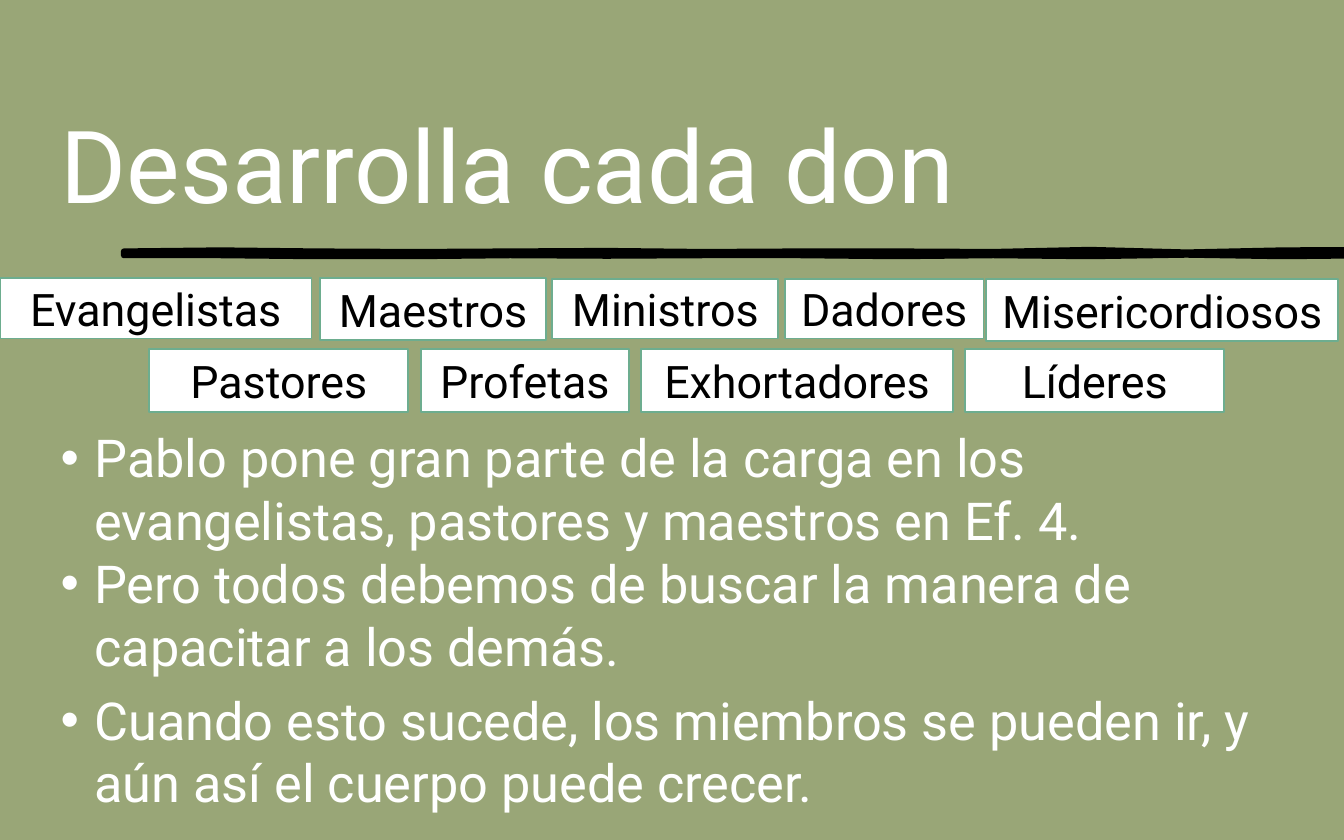
from dataclasses import dataclass

from lxml import etree
from pptx import Presentation
from pptx.dml.color import RGBColor
from pptx.enum.shapes import MSO_SHAPE
from pptx.enum.text import MSO_ANCHOR, MSO_AUTO_SIZE, PP_ALIGN
from pptx.oxml.ns import qn
from pptx.util import Cm, Pt

RECTANGLE = MSO_SHAPE.RECTANGLE
LEFT, CENTER = PP_ALIGN.LEFT, PP_ALIGN.CENTER
TOP, MIDDLE = MSO_ANCHOR.TOP, MSO_ANCHOR.MIDDLE
NO_AUTOFIT = MSO_AUTO_SIZE.NONE

FONT = "Roboto"
WHITE, BLACK, SAGE, GREEN = "FFFFFF", "000000", "99A677", "6DAD8F"


@dataclass
class Box:
    left: float
    top: float
    width: float
    height: float


@dataclass
class Gift:
    name: str
    box: Box


@dataclass
class Bullet:
    text: str
    space_before: float = 0


BULLETS = [
    Bullet("Pablo pone gran parte de la carga en los evangelistas, pastores y maestros en Ef. 4."),
    Bullet("Pero todos debemos de buscar la manera de capacitar a los demás."),
    Bullet("Cuando esto sucede, los miembros se pueden ir, y aún así el cuerpo puede crecer.", 6),
]
UPPER_GIFTS = [
    Gift("Evangelistas", Box(0, 5.26, 5.89, 1.14)),
    Gift("Maestros", Box(6.05, 5.26, 4.27, 1.17)),
    Gift("Ministros", Box(10.44, 5.28, 4.27, 1.12)),
    Gift("Dadores", Box(14.83, 5.28, 3.76, 1.12)),
    Gift("Misericordiosos", Box(18.64, 5.28, 6.65, 1.17)),
]
LOWER_WIDTHS = {"Pastores": 4.9, "Profetas": 3.94, "Exhortadores": 5.89, "Líderes": 4.9}
LOWER_LEFT, LOWER_TOP, LOWER_HEIGHT, LOWER_GAP = 2.82, 6.6, 1.19, 0.23

STROKE = Box(2.34, 4.75, 29.21, 0.08)
# Vertical wobble of the brush stroke at equal steps, in cm
TOP_WOBBLE = [0, -0.02, 0, 0.01, 0, -0.01, 0.01, 0, 0, 0.01, -0.03, 0.02, -0.02, -0.03, 0.02, -0.02, 0]
BOTTOM_WOBBLE = [0, 0, 0.02, 0.02, 0, 0.01, 0, 0, 0.02, 0, 0.02, -0.01, 0.02, 0, 0.03, 0.01, 0]


def color(hex_code: str) -> RGBColor:
    return RGBColor.from_string(hex_code)


def place(shape, box: Box) -> None:
    shape.left, shape.top = Cm(box.left), Cm(box.top)
    shape.width, shape.height = Cm(box.width), Cm(box.height)


def format_paragraph(paragraph, size: float, hex_code: str, alignment) -> None:
    paragraph.alignment = alignment
    paragraph.font.name = FONT
    paragraph.font.size = Pt(size)
    paragraph.font.color.rgb = color(hex_code)


def set_bullet(paragraph, indent: float) -> None:
    properties = paragraph._p.get_or_add_pPr()
    properties.set("marL", str(Cm(indent)))
    properties.set("indent", str(-Cm(indent)))
    etree.SubElement(properties, qn("a:buFont"), typeface="Arial")
    etree.SubElement(properties, qn("a:buChar"), char="•")


def fill_title(title, text: str) -> None:
    place(title, Box(0.89, 1.24, 29.21, 3.68))
    frame = title.text_frame
    frame.text = text
    frame.auto_size = NO_AUTOFIT
    frame.vertical_anchor = MIDDLE
    format_paragraph(frame.paragraphs[0], 54, WHITE, LEFT)


def fill_body(body, bullets: list[Bullet]) -> None:
    place(body, Box(0.89, 7.92, 23.95, 7.7))
    frame = body.text_frame
    frame.text = "\n".join(bullet.text for bullet in bullets)
    frame.auto_size = NO_AUTOFIT
    frame.vertical_anchor = TOP
    for paragraph, bullet in zip(frame.paragraphs, bullets):
        format_paragraph(paragraph, 28, WHITE, LEFT)
        paragraph.space_before = Pt(bullet.space_before)
        set_bullet(paragraph, 0.64)


def draw_brush_stroke(slide) -> None:
    step = STROKE.width / (len(TOP_WOBBLE) - 1)

    def edge(base: float, wobble: list[float]) -> list[tuple[int, int]]:
        return [(Cm(STROKE.left + index * step), Cm(base + offset))
                for index, offset in enumerate(wobble)]

    upper = edge(STROKE.top, TOP_WOBBLE)
    lower = edge(STROKE.top + STROKE.height, BOTTOM_WOBBLE)
    builder = slide.shapes.build_freeform(*upper[0])
    builder.add_line_segments(upper[1:] + lower[::-1], close=True)
    stroke = builder.convert_to_shape()
    stroke.shadow.inherit = False
    stroke.fill.solid()
    stroke.fill.fore_color.rgb = color(BLACK)
    stroke.line.color.rgb = color(BLACK)
    stroke.line.width = Pt(3)


def lower_gifts() -> list[Gift]:
    gifts, left = [], LOWER_LEFT
    for name, width in LOWER_WIDTHS.items():
        gifts.append(Gift(name, Box(left, LOWER_TOP, width, LOWER_HEIGHT)))
        left += width + LOWER_GAP
    return gifts


def draw_gift(slide, gift: Gift) -> None:
    shape = slide.shapes.add_shape(RECTANGLE, 0, 0, 0, 0)
    place(shape, gift.box)
    shape.shadow.inherit = False
    shape.fill.solid()
    shape.fill.fore_color.rgb = color(WHITE)
    shape.line.color.rgb = color(GREEN)
    shape.line.width = Pt(1)
    frame = shape.text_frame
    frame.text = gift.name
    frame.word_wrap = False
    frame.vertical_anchor = MIDDLE
    format_paragraph(frame.paragraphs[0], 24, BLACK, CENTER)


def main() -> None:
    presentation = Presentation()
    presentation.slide_width, presentation.slide_height = Cm(25.4), Cm(15.88)
    slide = presentation.slides.add_slide(presentation.slide_layouts[1])
    slide.background.fill.solid()
    slide.background.fill.fore_color.rgb = color(SAGE)
    draw_brush_stroke(slide)
    fill_title(slide.shapes.title, "Desarrolla cada don")
    fill_body(slide.placeholders[1], BULLETS)
    for gift in UPPER_GIFTS + lower_gifts():
        draw_gift(slide, gift)
    presentation.save("out.pptx")


if __name__ == "__main__":
    main()
